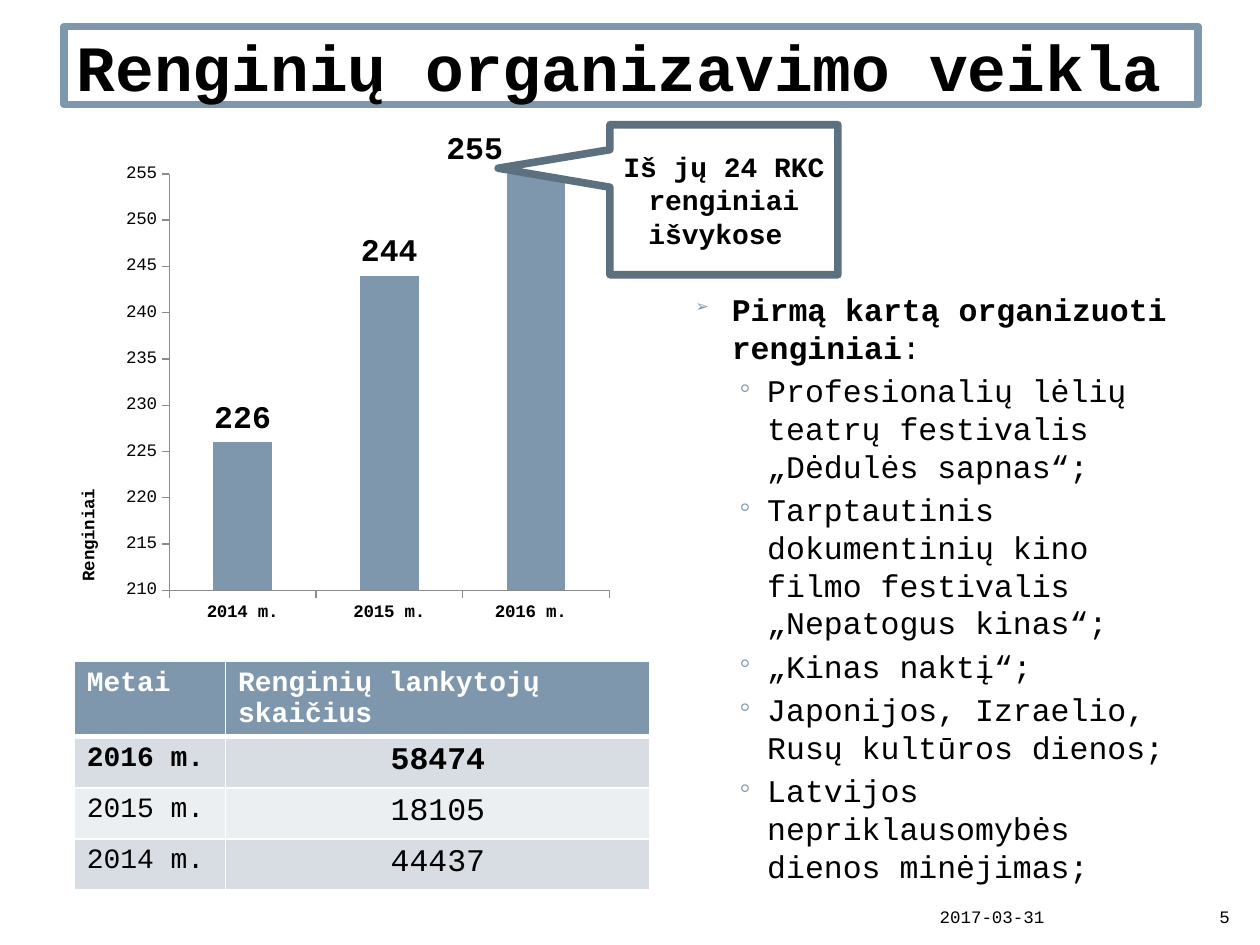
from lxml import etree
from pptx import Presentation
from pptx.chart.data import CategoryChartData
from pptx.dml.color import RGBColor
from pptx.enum.chart import XL_CHART_TYPE, XL_LABEL_POSITION, XL_TICK_MARK
from pptx.enum.shapes import MSO_SHAPE
from pptx.enum.text import MSO_ANCHOR, PP_ALIGN
from pptx.oxml import parse_xml
from pptx.oxml.ns import nsdecls, qn
from pptx.util import Pt

LEFT, CENTER, RIGHT = PP_ALIGN.LEFT, PP_ALIGN.CENTER, PP_ALIGN.RIGHT
TOP, MIDDLE, BOTTOM = MSO_ANCHOR.TOP, MSO_ANCHOR.MIDDLE, MSO_ANCHOR.BOTTOM
FONT = "Courier New"
BLACK = RGBColor(0, 0, 0)
WHITE = RGBColor(0xFF, 0xFF, 0xFF)
STEEL = RGBColor(0x7E, 0x97, 0xAD)
DARK_STEEL = RGBColor(0x5D, 0x70, 0x80)
AXIS_GRAY = RGBColor(0x8B, 0x8B, 0x8B)
BANDS = [RGBColor(0xD8, 0xDD, 0xE3), RGBColor(0xEC, 0xEF, 0xF1)]

TITLE = "Renginių organizavimo veikla"
CALLOUT = "Iš jų 24 RKC renginiai išvykose "
YEARS = ["2014 m.", "2015 m.", "2016 m. "]
EVENTS = [226, 244, 255]
VISITORS = [
    ("Metai", "Renginių lankytojų skaičius"),
    ("2016 m.", "58474"),
    ("2015 m.", "18105"),
    ("2014 m.", "44437"),
]
LIST_HEADING = "Pirmą kartą organizuoti renginiai"
FIRST_EVENTS = [
    "Profesionalių lėlių teatrų festivalis „Dėdulės sapnas“;",
    "Tarptautinis dokumentinių kino filmo festivalis „Nepatogus kinas“;",
    "„Kinas naktį“;",
    "Japonijos, Izraelio, Rusų kultūros dienos;",
    "Latvijos nepriklausomybės dienos minėjimas;",
]


def style_font(font, size, bold=False, color=BLACK):
    font.name, font.size, font.bold = FONT, Pt(size), bold
    font.color.rgb = color


def add_text(para, text, size=18, bold=False, color=BLACK, align=LEFT):
    para.alignment = align
    span = para.add_run()
    span.text = text
    style_font(span.font, size, bold, color)


def prepare_frame(shape, anchor):
    frame = shape.text_frame
    frame.word_wrap = True
    frame.vertical_anchor = anchor
    return frame


def add_box(page, left, top, width, height, anchor=TOP):
    box = page.shapes.add_textbox(Pt(left), Pt(top), Pt(width), Pt(height))
    return prepare_frame(box, anchor)


def add_outlined(page, kind, line_color, left, top, width, height):
    shape = page.shapes.add_shape(kind, Pt(left), Pt(top), Pt(width), Pt(height))
    shape.shadow.inherit = False
    shape.fill.solid()
    shape.fill.fore_color.rgb = WHITE
    shape.line.color.rgb = line_color
    shape.line.width = Pt(4.33)
    return shape


def set_bullet(para, mark, margin, indent, size):
    props = para._p.get_or_add_pPr()
    props.set("marL", str(Pt(margin)))
    props.set("indent", str(Pt(indent)))
    color = etree.SubElement(props, qn("a:buClr"))
    etree.SubElement(color, qn("a:srgbClr"), val=str(STEEL))
    etree.SubElement(props, qn("a:buSzPct"), val=str(size * 1000))
    etree.SubElement(props, qn("a:buFont"), typeface=FONT)
    etree.SubElement(props, qn("a:buChar"), char=mark)


def manual_layout(x, y, width=None, height=None):
    """Chart layout in fractions; with a size it places the inner plot area."""
    values = {"x": x, "y": y}
    head = ""
    if width:
        values.update(w=width, h=height)
        head = '<c:layoutTarget val="inner"/>'
    if width or x > 0:
        head += '<c:xMode val="edge"/><c:yMode val="edge"/>'
    body = "".join(f'<c:{key} val="{value}"/>' for key, value in values.items())
    return parse_xml(f'<c:layout {nsdecls("c")}><c:manualLayout>{head}{body}'
                     '</c:manualLayout></c:layout>')


def replace_layout(parent, layout, position):
    for old in parent.findall(qn("c:layout")):
        parent.remove(old)
    parent.insert(position, layout)


def add_events_chart(page):
    data = CategoryChartData()
    data.categories = YEARS
    data.add_series("Renginiai", EVENTS)
    chart = page.shapes.add_chart(XL_CHART_TYPE.COLUMN_CLUSTERED, Pt(36.3), Pt(76.3),
                                  Pt(318.2), Pt(283.7), data).chart
    chart.has_legend = chart.has_title = False
    style_font(chart.font, 10, True)
    plot = chart.plots[0]
    plot.gap_width = 150
    plot.vary_by_categories = False
    series = plot.series[0]
    series.format.fill.solid()
    series.format.fill.fore_color.rgb = STEEL
    labels = series.data_labels
    labels.show_value = True
    labels.position = XL_LABEL_POSITION.OUTSIDE_END
    style_font(labels.font, 18, True)
    last = series.points[2].data_label
    style_font(last.font, 18, True)
    last.position = XL_LABEL_POSITION.OUTSIDE_END
    replace_layout(last._dLbl, manual_layout(-0.11, 0), 1)

    values = chart.value_axis
    values.minimum_scale, values.maximum_scale, values.major_unit = 210, 255, 5
    values.has_major_gridlines = False
    for axis, bold in ((values, False), (chart.category_axis, True)):
        axis.major_tick_mark = XL_TICK_MARK.OUTSIDE
        axis.minor_tick_mark = XL_TICK_MARK.NONE
        axis.format.line.color.rgb = AXIS_GRAY
        style_font(axis.tick_labels.font, 10, bold)
    title = values.axis_title
    add_text(title.text_frame.paragraphs[0], "Renginiai", size=10, bold=True, align=CENTER)
    title.text_frame._txBody.bodyPr.set("rot", "-5400000")
    replace_layout(title._element, manual_layout(0.02, 0.71), 1)
    replace_layout(chart._chartSpace.chart.plotArea,
                   manual_layout(0.19, 0.08, 0.79, 0.84), 0)


def set_borders(cell, bottom):
    props = cell._tc.get_or_add_tcPr()
    for index, (side, width) in enumerate((("L", 1), ("R", 1), ("T", 1), ("B", bottom))):
        props.insert(index, parse_xml(
            f'<a:ln{side} {nsdecls("a")} w="{Pt(width)}"><a:solidFill>'
            f'<a:srgbClr val="{WHITE}"/></a:solidFill></a:ln{side}>'))


def add_visitors_table(page):
    table = page.shapes.add_table(len(VISITORS), 2, Pt(42.5), Pt(378),
                                  Pt(329), Pt(116.8)).table
    for column, width in zip(table.columns, (86.4, 242.6)):
        column.width = Pt(width)
    for row, texts in enumerate(VISITORS):
        table.rows[row].height = Pt(29.2)
        header = row == 0
        for column, text in enumerate(texts):
            cell = table.cell(row, column)
            cell.fill.solid()
            cell.fill.fore_color.rgb = STEEL if header else BANDS[(row - 1) % 2]
            if header:
                cell.margin_bottom = Pt(1)
            number = column == 1 and not header
            add_text(cell.text_frame.paragraphs[0], text, size=18 if number else 16,
                     bold=row < 2, color=WHITE if header else BLACK,
                     align=CENTER if number else LEFT)
            set_borders(cell, 3 if header else 1)


def add_event_list(page):
    frame = add_box(page, 382.3, 162, 301, 323.3)
    heading = frame.paragraphs[0]
    set_bullet(heading, "➢", 28.8, -20.2, 68)
    add_text(heading, LIST_HEADING, bold=True)
    add_text(heading, ":")
    for event in FIRST_EVENTS:
        para = frame.add_paragraph()
        para.level = 1
        para.space_before = Pt(3.2)
        set_bullet(para, "◦", 49, -18, 100)
        add_text(para, event)


def main():
    deck = Presentation()
    deck.slide_width, deck.slide_height = Pt(720), Pt(540)
    page = deck.slides.add_slide(deck.slide_layouts[6])

    title = add_outlined(page, MSO_SHAPE.RECTANGLE, STEEL, 36.7, 15.1, 648, 44.6)
    add_text(prepare_frame(title, MIDDLE).paragraphs[0], TITLE, size=36.9, bold=True)
    add_event_list(page)
    add_events_chart(page)
    add_visitors_table(page)

    callout = add_outlined(page, MSO_SHAPE.RECTANGULAR_CALLOUT, DARK_STEEL,
                           348.5, 71.3, 130.3, 85.7)
    callout.adjustments[0], callout.adjustments[1] = -0.99, -0.21
    add_text(prepare_frame(callout, MIDDLE).paragraphs[0], CALLOUT, size=16,
             bold=True, align=CENTER)

    for text, left, width, align in (("2017-03-31", 529.9, 151.2, LEFT),
                                     ("5", 681.1, 28.8, RIGHT)):
        frame = add_box(page, left, 504.7, width, 28.8, BOTTOM)
        add_text(frame.paragraphs[0], text, size=10, align=align)
    deck.save("out.pptx")


if __name__ == "__main__":
    main()
